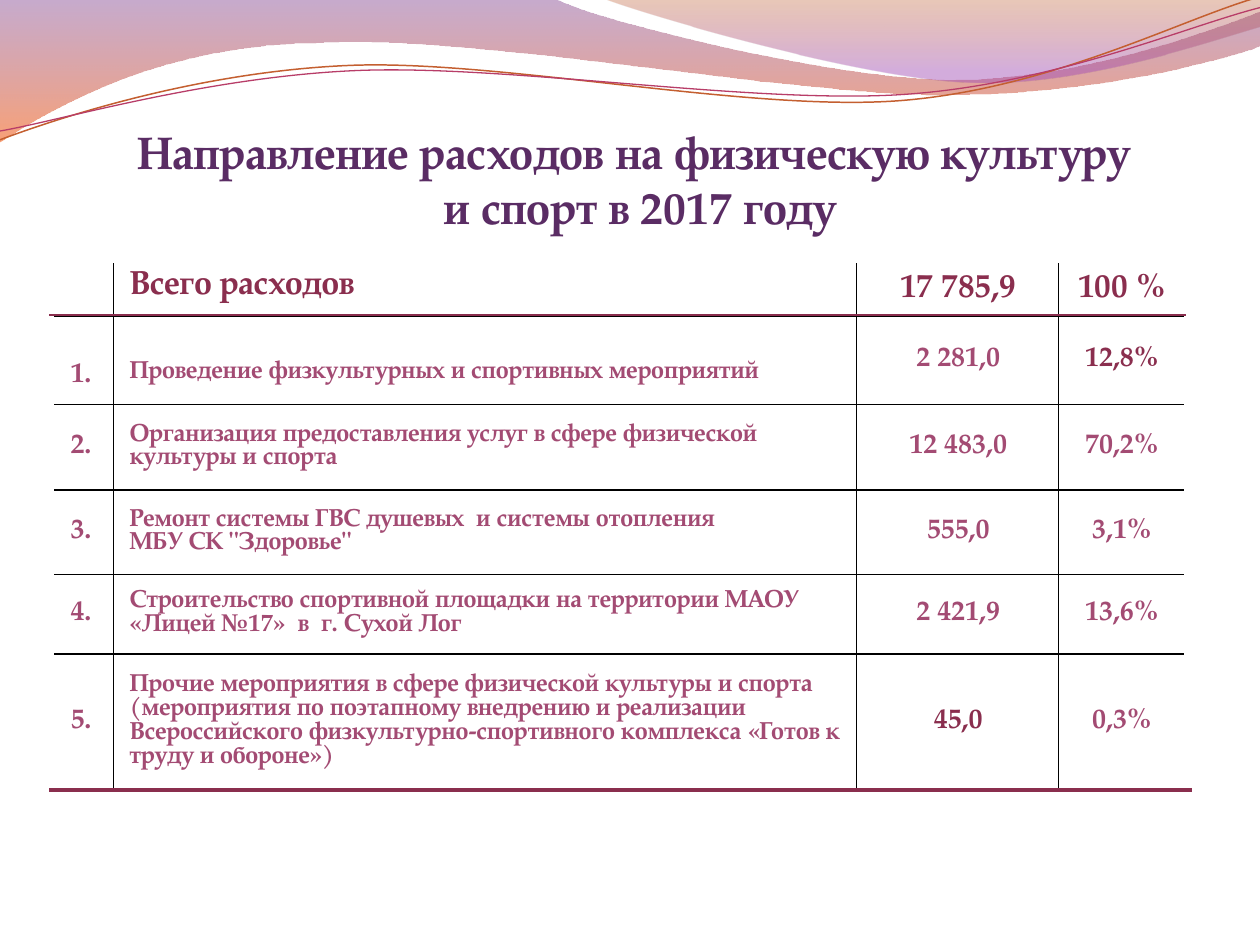
"""Builds the slide on sports spending in 2017: waves, title and table."""
from itertools import product
from math import cos, radians, sin
from lxml.etree import SubElement
from pptx import Presentation
from pptx.dml.color import RGBColor
from pptx.enum.shapes import MSO_CONNECTOR
from pptx.enum.text import MSO_ANCHOR, PP_ALIGN
from pptx.oxml.ns import qn
from pptx.util import Inches, Pt

FONT = "TeX Gyre Pagella"
PURPLE, WINE, ROSE, BLACK = "5A2C64", "8A2E4E", "A34B73", "000000"
TITLE = "Направление расходов на физическую культуру \vи спорт в 2017 году"
HEADER = ("", "Всего расходов", "17 785,9", "100 %")
EXPENSES = [
    ("Проведение физкультурных и спортивных мероприятий", "2 281,0", "12,8%"),
    ("Организация предоставления услуг в сфере физической культуры и спорта",
     "12 483,0", "70,2%"),
    ("Ремонт системы ГВС душевых  и системы отопления\nМБУ СК \"Здоровье\"",
     "555,0", "3,1%"),
    ("Строительство спортивной площадки на территории МАОУ  «Лицей №17»  в  г. Сухой Лог",
     "2 421,9", "13,6%"),
    ("Прочие мероприятия в сфере физической культуры и спорта  (мероприятия по "
     "поэтапному внедрению и реализации Всероссийского физкультурно-спортивного "
     "комплекса «Готов к труду и обороне»)", "45,0", "0,3%"),
]
DARK_CELLS = {(1, 3), (5, 2)}
TOP_MARGINS = {(0, 1): 0.06, (1, 0): 0.29, (1, 1): 0.24}
COLUMNS = (0.47, 5.9, 1.6, 1)
ROWS = (0.42, 0.7, 0.68, 0.67, 0.63, 1.08)
ALIGNS = (PP_ALIGN.LEFT, PP_ALIGN.LEFT, PP_ALIGN.CENTER, PP_ALIGN.CENTER)
SIZES = (16, 14, 16, 16)
RULES = [(0.39, 9.41, 2.5, 1.5), (0.39, 9.46, 6.27, 2.25)]

BANDS = [
    ((-0.01, -0.01, 10.02, 1.14),
     [(0, -0.01), (4.4, -0.01), (4.76, 0.17, 6.64, 0.63, 7.58, 0.63),
      (8.53, 0.63, 9.58, 0.26, 10, 0.09), (10.01, 0.36),
      (9.83, 0.44, 8.7, 0.76, 7.46, 0.75), (6.22, 0.75, 3.82, 0.28, 2.57, 0.34),
      (1.29, 0.35, 0.46, 0.83, -0.01, 1.13), (0, -0.01)],
     [(0, "834591", 45), (1, "F35307", 55)]),
    ((4.79, -0.01, 5.21, 0.7),
     [(4.79, -0.01), (5.09, 0.11, 6.82, 0.62, 7.69, 0.65),
      (8.56, 0.69, 9.61, 0.32, 10, 0.21), (10, 0), (4.79, -0.01)],
     [(0, "B74915", 30), (0.8, "A14BB4", 45)]),
]
TILT = -2.7
STRANDS = [
    ((-0.02, 0.22, 10.02, 0.71),
     [(0, 1.11), (0.48, 0.93, 1.58, 0.57, 2.77, 0.52),
      (3.95, 0.47, 5.93, 0.89, 7.13, 0.8), (8.33, 0.71, 9.38, 0.15, 9.98, -0.02)],
     "C45F30", 0.85),
    ((-0.02, 0.3, 10.03, 0.58),
     [(0, 1.04), (0.47, 0.96, 1.64, 0.61, 2.83, 0.56),
      (4.03, 0.51, 5.97, 0.83, 7.17, 0.75), (8.36, 0.67, 9.41, 0.21, 10, 0.06)],
     "B83D68", 0.75),
]


def rgb(value):
    """Return a colour from its hex string."""
    return RGBColor.from_string(value)


def to_local(x, y, box, tilt):
    """Map a slide point into the untilted frame of a box."""
    left, top, width, height = box
    dx, dy = x - left - width / 2, y - top - height / 2
    c, s = cos(radians(tilt)), sin(radians(tilt))
    return Inches(dx * c + dy * s + width / 2), Inches(dy * c - dx * s + height / 2)


def add_curve(slide, box, moves, tilt=0):
    """Add an outline of lines and cubic curves inside a box."""
    left, top, width, height = map(Inches, box)
    builder = slide.shapes.build_freeform(left, top)
    builder.add_line_segments([(left + width, top + height)], close=False)
    curve = builder.convert_to_shape()
    curve.shadow.inherit = False
    curve.rotation = tilt
    outline = next(curve._element.iter(qn("a:path")))
    for step in list(outline):
        outline.remove(step)
    for index, move in enumerate(moves):
        kind = "cubicBezTo" if len(move) == 6 else "lnTo" if index else "moveTo"
        step = SubElement(outline, qn(f"a:{kind}"))
        for point in zip(move[::2], move[1::2]):
            x, y = to_local(*point, box, tilt)
            SubElement(step, qn("a:pt"), x=str(x), y=str(y))
    if moves[0] == moves[-1]:
        SubElement(outline, qn("a:close"))
    return curve


def add_waves(slide):
    """Draw the shaded bands and the thin strands at the top."""
    for box, moves, stops in BANDS:
        band = add_curve(slide, box, moves)
        band.line.fill.background()
        band.fill.gradient()
        band.fill.gradient_angle = 270
        for stop, (position, color, _) in zip(band.fill.gradient_stops, stops):
            stop.position = position
            stop.color.rgb = rgb(color)
        for tint, (_, _, opacity) in zip(band._element.spPr.iter(qn("a:srgbClr")), stops):
            SubElement(tint, qn("a:alpha"), val=str(opacity * 1000))
    for box, moves, color, width in STRANDS:
        strand = add_curve(slide, box, moves, TILT)
        strand.fill.background()
        strand.line.color.rgb = rgb(color)
        strand.line.width = Pt(width)


def write(frame, text, size, color, align):
    """Fill a text frame with bold text in one style."""
    frame.word_wrap = True
    frame.text = text
    for paragraph in frame.paragraphs:
        paragraph.alignment = align
        for run in paragraph.runs:
            for name, value in {"name": FONT, "size": Pt(size), "bold": True}.items():
                setattr(run.font, name, value)
            run.font.color.rgb = rgb(color)


def add_title(slide):
    """Place the heading, resting on the bottom of its box."""
    box = slide.shapes.add_textbox(*map(Inches, (0.75, 0.83, 8.66, 1.02)))
    frame = box.text_frame
    margins = {"margin_left": 0, "margin_right": 0, "margin_top": Inches(0.05),
               "margin_bottom": 0, "vertical_anchor": MSO_ANCHOR.BOTTOM}
    for name, value in margins.items():
        setattr(frame, name, value)
    write(frame, TITLE, 26, PURPLE, PP_ALIGN.CENTER)


def set_borders(cell, row, column):
    """Draw the inner grid lines only."""
    edges = {"L": column > 0, "R": column < len(COLUMNS) - 1,
             "T": row > 0, "B": row < len(ROWS) - 1}
    properties = cell._tc.get_or_add_tcPr()
    for side, shown in edges.items():
        border = SubElement(properties, qn(f"a:ln{side}"), w=str(Pt(1)))
        if shown:
            fill = SubElement(border, qn("a:solidFill"))
            SubElement(fill, qn("a:srgbClr"), val=BLACK)
        else:
            SubElement(border, qn("a:noFill"))


def add_expenses(slide):
    """Lay out the table of expenses."""
    grid = [HEADER] + [(f"{n}.", *entry) for n, entry in enumerate(EXPENSES, 1)]
    place = map(Inches, (0.43, 2.09, sum(COLUMNS), sum(ROWS)))
    table = slide.shapes.add_table(len(ROWS), len(COLUMNS), *place).table
    table.first_row = table.horz_banding = False
    for column, width in zip(table.columns, COLUMNS):
        column.width = Inches(width)
    for row, height in zip(table.rows, ROWS):
        row.height = Inches(height)
    for r, c in product(range(len(ROWS)), range(len(COLUMNS))):
        cell = table.cell(r, c)
        layout = {"margin_left": Inches(0.13), "margin_right": Inches(0.12),
                  "margin_top": Inches(TOP_MARGINS.get((r, c), 0.04)),
                  "margin_bottom": Inches(0.04),
                  "vertical_anchor": MSO_ANCHOR.TOP if (r, c) == (0, 1) else MSO_ANCHOR.MIDDLE}
        for name, value in layout.items():
            setattr(cell, name, value)
        set_borders(cell, r, c)
        cell.fill.background()
        color = WINE if r == 0 or (r, c) in DARK_CELLS else ROSE
        write(cell.text_frame, grid[r][c], SIZES[c] if r else 19, color, ALIGNS[c])


def add_rules(slide):
    """Underline the totals and the whole table."""
    for left, right, y, width in RULES:
        rule = slide.shapes.add_connector(
            MSO_CONNECTOR.STRAIGHT, *map(Inches, (left, y, right, y)))
        rule.line.color.rgb = rgb(WINE)
        rule.line.width = Pt(width)
        SubElement(rule._element.spPr, qn("a:effectLst"))


def main():
    """Build and save the slide."""
    deck = Presentation()
    deck.slide_width, deck.slide_height = Inches(10), Inches(7.5)
    slide = deck.slides.add_slide(deck.slide_layouts[6])
    for add_part in (add_waves, add_title, add_expenses, add_rules):
        add_part(slide)
    deck.save("out.pptx")


if __name__ == "__main__":
    main()
